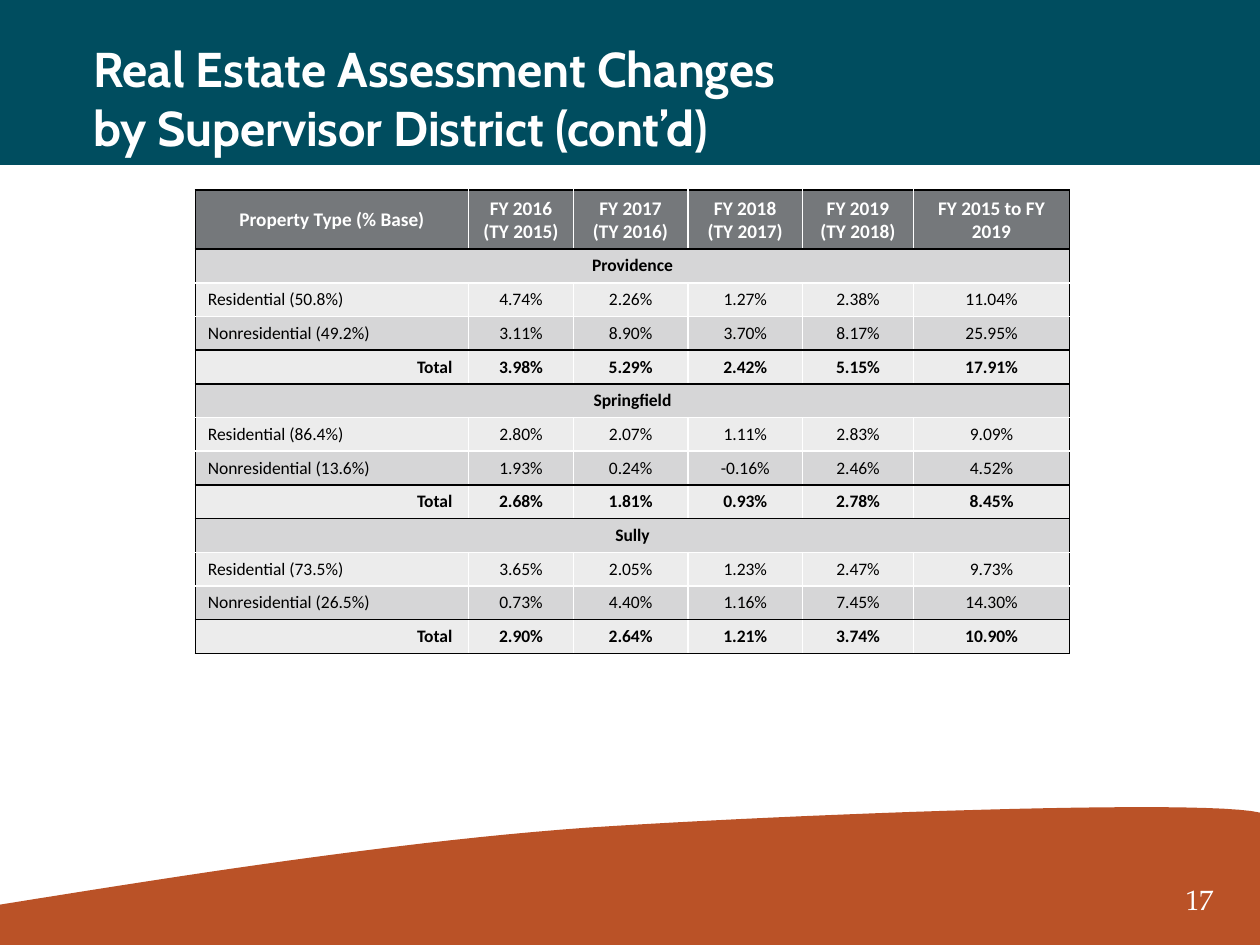
import dataclasses

import pptx
import pptx.dml.color
import pptx.enum.shapes
import pptx.enum.text
import pptx.oxml
import pptx.oxml.ns
import pptx.util

Inches = pptx.util.Inches
Align = pptx.enum.text.PP_ALIGN
Anchor = pptx.enum.text.MSO_ANCHOR


@dataclasses.dataclass(frozen=True)
class Theme:
    white: str = "FFFFFF"
    black: str = "000000"
    teal: str = "004D5F"
    rust: str = "BA5227"
    header: str = "75787B"
    dark_row: str = "D6D6D7"
    light_row: str = "ECECEC"
    title_font: str = "Cabin"
    table_font: str = "Calibri"
    number_font: str = "TeX Gyre Pagella"
    title_size: float = 27.9
    header_size: float = 11
    body_size: float = 10
    number_size: float = 16


THEME = Theme()

HEADINGS = [
    "Property Type (% Base)",
    "FY 2016\n(TY 2015)",
    "FY 2017\n(TY 2016)",
    "FY 2018\n(TY 2017)",
    "FY 2019\n(TY 2018)",
    "FY 2015 to FY 2019",
]
DISTRICTS = {
    "Providence": [
        ["Residential (50.8%)", "4.74%", "2.26%", "1.27%", "2.38%", "11.04%"],
        ["Nonresidential (49.2%)", "3.11%", "8.90%", "3.70%", "8.17%", "25.95%"],
        ["Total", "3.98%", "5.29%", "2.42%", "5.15%", "17.91%"],
    ],
    "Springfield": [
        ["Residential (86.4%)", "2.80%", "2.07%", "1.11%", "2.83%", "9.09%"],
        ["Nonresidential (13.6%)", "1.93%", "0.24%", "-0.16%", "2.46%", "4.52%"],
        ["Total", "2.68%", "1.81%", "0.93%", "2.78%", "8.45%"],
    ],
    "Sully": [
        ["Residential (73.5%)", "3.65%", "2.05%", "1.23%", "2.47%", "9.73%"],
        ["Nonresidential (26.5%)", "0.73%", "4.40%", "1.16%", "7.45%", "14.30%"],
        ["Total", "2.90%", "2.64%", "1.21%", "3.74%", "10.90%"],
    ],
}
COLUMN_WIDTHS = [2.17, 0.83, 0.91, 0.91, 0.88, 1.24]
HEADER_HEIGHT = 0.43
ROW_HEIGHT = 0.26


def paint(shape, color):
    shape.shadow.inherit = False
    shape.fill.solid()
    shape.fill.fore_color.rgb = pptx.dml.color.RGBColor.from_string(color)
    shape.line.fill.background()


def style(paragraph, font, size, color, bold=False, align=Align.LEFT):
    paragraph.alignment = align
    paragraph.font.name = font
    paragraph.font.size = pptx.util.Pt(size)
    paragraph.font.bold = bold
    paragraph.font.color.rgb = pptx.dml.color.RGBColor.from_string(color)


def curve_points(start, first_control, second_control, end, steps=24):
    points = []
    for step in range(1, steps + 1):
        t = step / steps
        weights = ((1 - t) ** 3, 3 * t * (1 - t) ** 2, 3 * t * t * (1 - t), t ** 3)
        corners = (start, first_control, second_control, end)
        points.append(tuple(
            Inches(sum(weight * corner[axis] for weight, corner in zip(weights, corners)))
            for axis in (0, 1)
        ))
    return points


def add_wave(page):
    right, crest, left = (10, 6.45), (4.65, 6.57), (0, 7.18)
    builder = page.shapes.build_freeform(Inches(0), Inches(7.5), scale=1.0)
    builder.add_line_segments(
        [(Inches(10), Inches(7.5)), (Inches(10), Inches(6.45))]
        + curve_points(right, (9.55, 6.34), (6.32, 6.46), crest)
        + curve_points(crest, (2.99, 6.69), (1.01, 7.02), left),
        close=True,
    )
    paint(builder.convert_to_shape(), THEME.rust)


def add_banner(page):
    banner = page.shapes.add_shape(
        pptx.enum.shapes.MSO_SHAPE.RECTANGLE, 0, 0, Inches(10), Inches(1.31))
    paint(banner, THEME.teal)


def add_text(page, text, left, top, width, height, anchor, **look):
    box = page.shapes.add_textbox(Inches(left), Inches(top), Inches(width), Inches(height))
    frame = box.text_frame
    frame.word_wrap = True
    frame.vertical_anchor = anchor
    frame.margin_left = frame.margin_right = Inches(0.05)
    frame.text = text
    for para in frame.paragraphs:
        style(para, color=THEME.white, **look)


def set_borders(cell, **colors):
    properties = cell._tc.get_or_add_tcPr()
    namespace = pptx.oxml.ns.nsdecls("a")
    for index, side in enumerate("LRTB"):
        properties.insert(index, pptx.oxml.parse_xml(
            f'<a:ln{side} {namespace} w="12700"><a:solidFill>'
            f'<a:srgbClr val="{colors[side]}"/></a:solidFill></a:ln{side}>'))


def fill_cell(cell, text, fill, size, color, bold, align):
    cell.fill.solid()
    cell.fill.fore_color.rgb = pptx.dml.color.RGBColor.from_string(fill)
    cell.vertical_anchor = Anchor.MIDDLE
    cell.text = text
    for para in cell.text_frame.paragraphs:
        style(para, THEME.table_font, size, color, bold, align)


def table_rows():
    rows = [("header", HEADINGS)]
    for district, figures in DISTRICTS.items():
        rows.append(("district", [district] + [""] * 5))
        rows.extend(zip(("residential", "nonresidential", "total"), figures))
    return rows


def add_assessment_table(page):
    rows = table_rows()
    height = HEADER_HEIGHT + ROW_HEIGHT * (len(rows) - 1)
    table = page.shapes.add_table(
        len(rows), len(HEADINGS), Inches(1.55), Inches(1.51),
        Inches(sum(COLUMN_WIDTHS)), Inches(height)).table
    table.horz_banding = False
    for column, width in zip(table.columns, COLUMN_WIDTHS):
        column.width = Inches(width)

    fills = {"header": THEME.header, "district": THEME.dark_row,
             "nonresidential": THEME.dark_row}
    label_align = {"residential": Align.LEFT, "nonresidential": Align.LEFT,
                   "total": Align.RIGHT}
    last = len(HEADINGS) - 1
    for row, (kind, texts) in enumerate(rows):
        is_header = kind == "header"
        table.rows[row].height = Inches(HEADER_HEIGHT if is_header else ROW_HEIGHT)
        if kind == "district":
            table.cell(row, 0).merge(table.cell(row, last))
        for column, text in enumerate(texts):
            cell = table.cell(row, column)
            align = label_align.get(kind, Align.CENTER) if column == 0 else Align.CENTER
            fill_cell(
                cell, text, fills.get(kind, THEME.light_row),
                THEME.header_size if is_header else THEME.body_size,
                THEME.white if is_header else THEME.black,
                kind in ("header", "district", "total"), align)
            if align == Align.RIGHT:
                cell.margin_right = Inches(0.13)
            black_sides = {
                "L": column == 0,
                "R": column == last or kind == "district",
                "T": kind in ("header", "district", "total"),
                "B": kind in ("header", "nonresidential", "total"),
            }
            set_borders(cell, **{side: THEME.black if black else THEME.white
                                 for side, black in black_sides.items()})


def main():
    deck = pptx.Presentation()
    deck.slide_width, deck.slide_height = Inches(10), Inches(7.5)
    page = deck.slides.add_slide(deck.slide_layouts[6])
    add_wave(page)
    add_banner(page)
    add_text(page, "Real Estate Assessment Changes\vby Supervisor District (cont’d)",
             0.69, 0.26, 9.2, 0.75, Anchor.TOP,
             font=THEME.title_font, size=THEME.title_size, bold=True)
    add_text(page, "17", 9.27, 6.9, 0.5, 0.48, Anchor.MIDDLE,
             font=THEME.number_font, size=THEME.number_size, align=Align.CENTER)
    add_assessment_table(page)
    deck.save("out.pptx")


if __name__ == "__main__":
    main()
